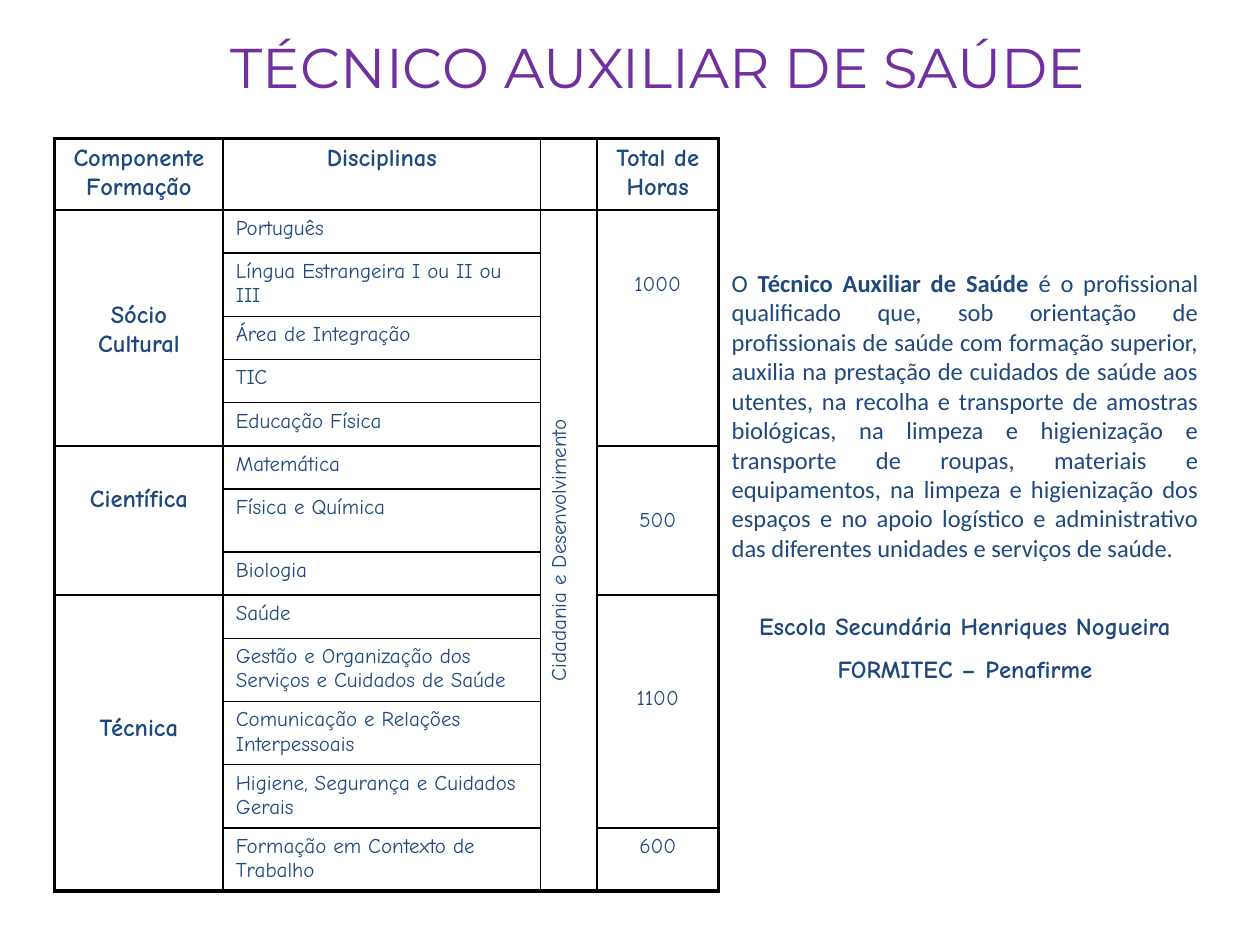
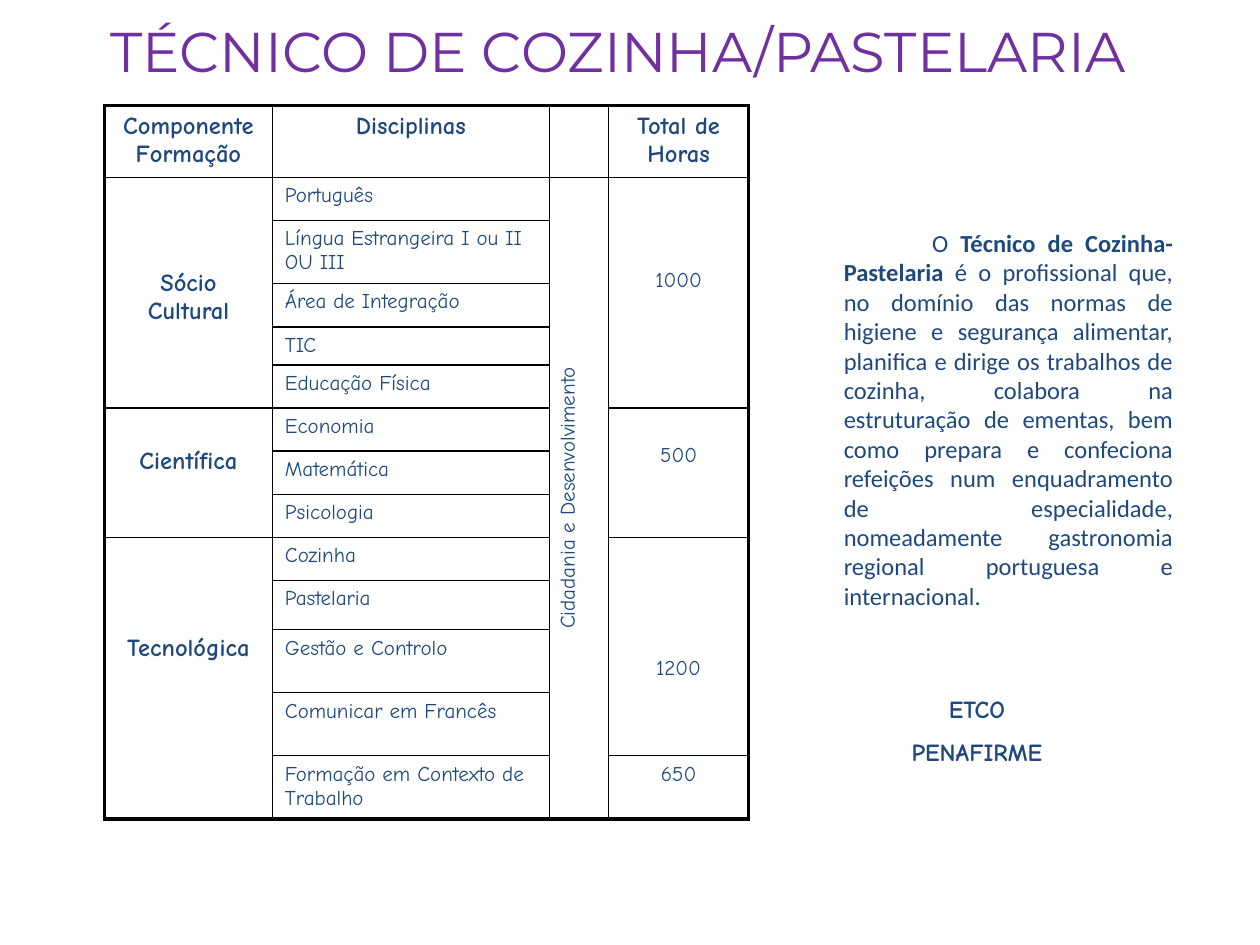
from dataclasses import dataclass

from lxml import etree
from pptx import Presentation
from pptx import util as u
from pptx.dml.color import RGBColor
from pptx.enum import text
from pptx.oxml.ns import qn

NAVY = RGBColor(0x1F, 0x49, 0x7D)
PURPLE = RGBColor(0x70, 0x30, 0xA0)
BLACK = RGBColor(0, 0, 0)

MID, FULL = text.PP_ALIGN.CENTER, text.PP_ALIGN.JUSTIFY
THIN, THICK = u.Pt(1), u.Pt(2.25)

# Text formats
TITLE = {"name": "Montserrat", "size": u.Pt(32), "bold": False}
HEAD = {"name": "Comic Neue", "size": u.Pt(14), "bold": True}
CELL = {"name": "Comic Neue", "size": u.Pt(12), "bold": False}
BODY = {"name": "Calibri", "size": u.Pt(14), "bold": False}
STRONG = BODY | {"bold": True}

# Row heights and the usual top margin of a cell, in cm
TOP, LOW, HIGH = 1.44, 0.87, 1.27
PAD = 0.13
HEADS = ("Componente Formação", "Disciplinas", "", "Total de Horas")
SIDE = "Cidadania e Desenvolvimento"


@dataclass
class Block:
    """A label that spans rows, with its top margin in cm."""
    label: str
    rows: int
    pad: float = PAD


@dataclass
class Topic:
    name: str
    high: float = LOW


@dataclass
class Para:
    runs: list[tuple[str, dict]]
    align: text.PP_ALIGN = MID
    gap: float = 0
    left: float = 0
    first: float = 0


@dataclass
class Course:
    """Boxes are left, top, width and height in cm."""
    title: str
    head: tuple[float, ...]
    grid: tuple[float, float]
    cols: tuple[float, ...]
    bands: list[Block]
    topics: list[Topic]
    hours: list[Block]
    side: tuple[float, ...]
    paras: list[Para]


COURSES = [
    Course(
        "TÉCNICO AUXILIAR DE SAÚDE", (2.02, 0.53, 22.5, 2.01),
        (1.1, 2.79), (3.4, 6.4, 1.14, 2.44),
        [Block("Sócio Cultural", 5, 1.85), Block("Científica", 3, 0.8),
         Block("Técnica", 5, 2.41)],
        [Topic("Português"),
         Topic("Língua Estrangeira I ou II ou III", HIGH),
         Topic("Área de Integração"),
         Topic("TIC"),
         Topic("Educação Física"),
         Topic("Matemática"),
         Topic("Física e Química", HIGH),
         Topic("Biologia"),
         Topic("Saúde"),
         Topic("Gestão e Organização dos Serviços e Cuidados de Saúde", HIGH),
         Topic("Comunicação e Relações Interpessoais", HIGH),
         Topic("Higiene, Segurança e Cuidados Gerais", HIGH),
         Topic("Formação em Contexto de Trabalho", HIGH)],
        [Block("1000", 5, 1.27), Block("500", 3, 1.27),
         Block("1100", 4, 1.84), Block("600", 1)],
        (14.5, 5.28, 9.91, 12.14),
        [Para([("O ", BODY), ("Técnico Auxiliar de Saúde ", STRONG),
               ("é o profissional qualificado que, sob orientação de "
                "profissionais de saúde com formação superior, auxilia na "
                "prestação de cuidados de saúde aos utentes, na recolha e "
                "transporte de amostras biológicas, na limpeza e "
                "higienização e transporte de roupas, materiais e "
                "equipamentos, na limpeza e higienização dos espaços e no "
                "apoio logístico e administrativo das diferentes unidades "
                "e serviços de saúde.", BODY)], FULL),
         Para([("Escola Secundária Henriques Nogueira", HEAD)], gap=28),
         Para([("FORMITEC – Penafirme", HEAD)], gap=7.5)]),
    Course(
        "TÉCNICO DE COZINHA/PASTELARIA", (0.51, 0.2, 23.9, 1.52),
        (2.11, 2.13), (3.38, 5.59, 1.19, 2.82),
        [Block("Sócio Cultural", 5, 1.85), Block("Científica", 3, 0.8),
         Block("Tecnológica", 5, 1.96)],
        [Topic("Português"),
         Topic("Língua Estrangeira I ou II OU III", HIGH),
         Topic("Área de Integração"),
         Topic("TIC", 0.76),
         Topic("Educação Física"),
         Topic("Economia"),
         Topic("Matemática"),
         Topic("Psicologia"),
         Topic("Cozinha"),
         Topic("Pastelaria", 0.99),
         Topic("Gestão e Controlo", HIGH),
         Topic("Comunicar em Francês", HIGH),
         Topic("Formação em Contexto de Trabalho", HIGH)],
        [Block("1000", 5, 1.85), Block("500", 3, 0.71),
         Block("1200", 4, 2.41), Block("650", 1)],
        (15.49, 4.47, 8.41, 12.24),
        [Para([("O ", BODY), ("Técnico de Cozinha-Pastelaria ", STRONG),
               ("é o profissional que, no domínio das normas de higiene e "
                "segurança alimentar, planifica e dirige os trabalhos de "
                "cozinha, colabora na estruturação de ementas, bem como "
                "prepara e confeciona refeições num enquadramento de "
                "especialidade, nomeadamente gastronomia regional "
                "portuguesa e internacional.", BODY)],
              FULL, left=1.27, first=1.78),
         Para([("ETCO", HEAD)], gap=48),
         Para([("PENAFIRME", HEAD)], gap=7.5)]),
]


def add_run(para, words: str, form: dict, tint: RGBColor = NAVY) -> None:
    run = para.add_run()
    run.text = words
    for key, val in form.items():
        setattr(run.font, key, val)
    run.font.color.rgb = tint


def add_box(slide, area: tuple[float, ...], paras: list[Para],
            tint: RGBColor = NAVY) -> None:
    frame = slide.shapes.add_textbox(*map(u.Cm, area)).text_frame
    frame.word_wrap = True
    for i, item in enumerate(paras):
        para = frame.add_paragraph() if i else frame.paragraphs[0]
        para.alignment = item.align
        para.space_before = u.Pt(item.gap)
        if item.left:
            props = para._p.get_or_add_pPr()
            props.set("marL", str(u.Cm(item.left)))
            props.set("indent", str(u.Cm(item.first)))
        for words, form in item.runs:
            add_run(para, words, form, tint)


def fill_cell(cell, words: str, form: dict, align=MID, pad: float = PAD) -> None:
    cell.margin_top = u.Cm(pad)
    para = cell.text_frame.paragraphs[0]
    para.alignment = align
    if words:
        add_run(para, words, form)


def add_span(table, col: int, row: int, block: Block, form: dict):
    cell = table.cell(row, col)
    if block.rows > 1:
        cell.merge(table.cell(row + block.rows - 1, col))
    fill_cell(cell, block.label, form, pad=block.pad)
    return cell


def add_stack(table, col: int, blocks: list[Block], form: dict) -> None:
    row = 1
    for block in blocks:
        add_span(table, col, row, block, form)
        row += block.rows


def rule_cells(table) -> None:
    """Thin inner rules, a thick outer frame and no fill."""
    rows, cols = len(table.rows), len(table.columns)
    for r in range(rows):
        for c in range(cols):
            cell = table.cell(r, c)
            cell.fill.background()
            if cell.is_spanned:
                continue
            end = r + cell.span_height if cell.is_merge_origin else r + 1
            edges = {"L": c == 0, "R": c == cols - 1,
                     "T": r == 0, "B": end == rows}
            props = cell._tc.get_or_add_tcPr()
            for i, (side, outer) in enumerate(edges.items()):
                line = etree.Element(qn(f"a:ln{side}"),
                                     w=str(int(THICK if outer else THIN)))
                fill = etree.SubElement(line, qn("a:solidFill"))
                etree.SubElement(fill, qn("a:srgbClr"), val=str(BLACK))
                props.insert(i, line)


def add_grid(slide, course: Course) -> None:
    highs = [TOP] + [topic.high for topic in course.topics]
    area = (*course.grid, sum(course.cols), sum(highs))
    table = slide.shapes.add_table(len(highs), len(course.cols),
                                   *map(u.Cm, area)).table
    table.first_row = table.horz_banding = False
    for col, wide in zip(table.columns, course.cols):
        col.width = u.Cm(wide)
    for row, high in zip(table.rows, highs):
        row.height = u.Cm(high)

    for c, words in enumerate(HEADS):
        fill_cell(table.cell(0, c), words, HEAD)
    add_stack(table, 0, course.bands, HEAD)
    for r, topic in enumerate(course.topics, 1):
        fill_cell(table.cell(r, 1), topic.name, CELL, text.PP_ALIGN.LEFT)
    side = add_span(table, 2, 1, Block(SIDE, len(course.topics)), CELL)
    side._tc.get_or_add_tcPr().set("vert", "vert270")
    add_stack(table, 3, course.hours, CELL)
    rule_cells(table)


def main() -> None:
    deck = Presentation()
    deck.slide_width, deck.slide_height = u.Cm(25.4), u.Cm(19.05)
    for course in COURSES:
        slide = deck.slides.add_slide(deck.slide_layouts[6])
        add_box(slide, course.head, [Para([(course.title, TITLE)])], PURPLE)
        add_grid(slide, course)
        add_box(slide, course.side, course.paras)
    deck.save("out.pptx")


if __name__ == "__main__":
    main()
